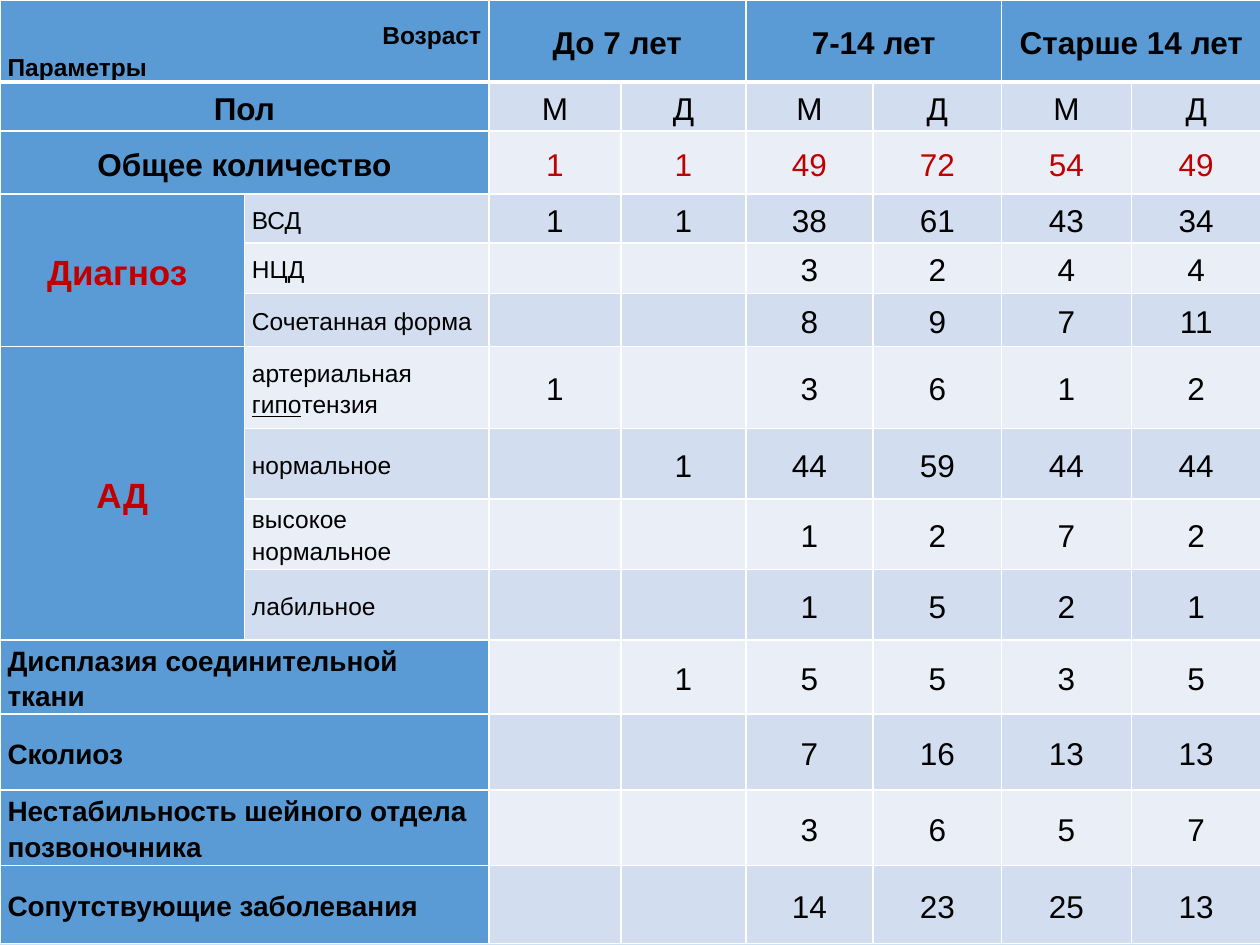
from lxml import etree
from pptx import Presentation
from pptx.dml.color import RGBColor
from pptx.enum.text import MSO_ANCHOR, PP_ALIGN
from pptx.oxml import parse_xml
from pptx.oxml.ns import nsdecls, qn
from pptx.util import Inches, Pt

LEFT, CENTER, RIGHT = PP_ALIGN.LEFT, PP_ALIGN.CENTER, PP_ALIGN.RIGHT
MIDDLE, BOTTOM = MSO_ANCHOR.MIDDLE, MSO_ANCHOR.BOTTOM

BLUE = RGBColor(0x5B, 0x9B, 0xD5)
BANDS = (RGBColor(0xEA, 0xEF, 0xF7), RGBColor(0xD2, 0xDE, 0xEF))
BLACK = RGBColor(0, 0, 0)
RED = RGBColor(0xC0, 0, 0)
WHITE = RGBColor(0xFF, 0xFF, 0xFF)
BACKGROUND_STOPS = (
    (0, RGBColor(0xF7, 0xFA, 0xFD)),
    (74, RGBColor(0xB5, 0xD2, 0xEC)),
    (83, RGBColor(0xB5, 0xD2, 0xEC)),
    (100, RGBColor(0xCE, 0xE1, 0xF2)),
)

FONT = "Arial"
COLUMN_WIDTHS = (1.94, 1.94, 1.05, 0.99, 1.01, 1.02, 1.03, 1.03)
ROW_HEIGHTS = (0.65, 0.39, 0.5, 0.39, 0.4, 0.42, 0.65,
               0.56, 0.56, 0.56, 0.59, 0.6, 0.6, 0.62)
FIRST_VALUE_COLUMN = 2
TOTAL_ROW = 2

AGE_GROUPS = ("До 7 лет", "7-14 лет", "Старше 14 лет")
# Row, label, size and alignment of the labels across both label columns
WIDE_LABELS = (
    (1, "Пол", 18, CENTER),
    (2, "Общее количество", 18, CENTER),
    (10, "Дисплазия соединительной ткани", 16, LEFT),
    (11, "Сколиоз", 16, LEFT),
    (12, "Нестабильность шейного отдела позвоночника", 16, LEFT),
    (13, "Сопутствующие заболевания", 16, LEFT),
)
# First row, group label and the labels of its rows
GROUPS = (
    (3, "Диагноз ", ("ВСД", "НЦД", "Сочетанная форма")),
    (6, "АД", ("артериальная гипотензия", "нормальное",
               "высокое нормальное", "лабильное")),
)
UNDERLINED = "гипо"
VALUES = (
    ("М", "Д", "М", "Д", "М", "Д"),
    (1, 1, 49, 72, 54, 49),
    (1, 1, 38, 61, 43, 34),
    ("", "", 3, 2, 4, 4),
    ("", "", 8, 9, 7, 11),
    (1, "", 3, 6, 1, 2),
    ("", 1, 44, 59, 44, 44),
    ("", "", 1, 2, 7, 2),
    ("", "", 1, 5, 2, 1),
    ("", 1, 5, 5, 3, 5),
    ("", "", 7, 16, 13, 13),
    ("", "", 3, 6, 5, 7),
    ("", "", 14, 23, 25, 13),
)


def paint_background(slide):
    fill = slide.background.fill
    fill.gradient()
    fill.gradient_angle = 270
    stops = slide.background._cSld.find(".//" + qn("a:gsLst"))
    for stop in list(stops):
        stops.remove(stop)
    for position, color in BACKGROUND_STOPS:
        stop = etree.SubElement(stops, qn("a:gs"), pos=str(position * 1000))
        etree.SubElement(stop, qn("a:srgbClr"), val=str(color))


def set_borders(cell, top=1, bottom=1):
    properties = cell._tc.get_or_add_tcPr()
    sides = (("L", 1), ("R", 1), ("T", top), ("B", bottom))
    for index, (side, width) in enumerate(sides):
        properties.insert(index, parse_xml(
            f'<a:ln{side} {nsdecls("a")} w="{Pt(width)}"><a:solidFill>'
            f'<a:srgbClr val="{WHITE}"/></a:solidFill></a:ln{side}>'))


def write(cell, text, size, color=BLACK, bold=False, align=CENTER):
    cell.text_frame.text = text
    for paragraph in cell.text_frame.paragraphs:
        paragraph.alignment = align
        paragraph.line_spacing = 1.15
        before, mark, after = paragraph.text.partition(UNDERLINED)
        if mark:
            paragraph.runs[0].text = before
            underlined = paragraph.add_run()
            underlined.text = mark
            underlined.font.underline = True
            paragraph.add_run().text = after
        for run in paragraph.runs:
            run.font.name = FONT
            run.font.size = Pt(size)
            run.font.bold = bold
            run.font.color.rgb = color


def add_grid(slide):
    table = slide.shapes.add_table(
        len(ROW_HEIGHTS), len(COLUMN_WIDTHS), 0, 0,
        Inches(sum(COLUMN_WIDTHS)), Inches(sum(ROW_HEIGHTS))).table
    for column, width in zip(table.columns, COLUMN_WIDTHS):
        column.width = Inches(width)
    for index, (row, height) in enumerate(zip(table.rows, ROW_HEIGHTS)):
        row.height = Inches(height)
        for cell in row.cells:
            cell.margin_left = cell.margin_right = Inches(0.06)
            cell.margin_top = cell.margin_bottom = 0
            cell.vertical_anchor = MIDDLE
            cell.fill.solid()
            cell.fill.fore_color.rgb = BANDS[index % 2]
            set_borders(cell, top=3 if index == 1 else 1,
                        bottom=3 if index == 0 else 1)
    return table


def merge_label(table, row, column, rows, columns):
    cell = table.cell(row, column)
    cell.merge(table.cell(row + rows - 1, column + columns - 1))
    for r in range(row, row + rows):
        for c in range(column, column + columns):
            table.cell(r, c).fill.fore_color.rgb = BLUE
    return cell


def fill_header(table):
    corner = merge_label(table, 0, 0, 1, 2)
    write(corner, "Возраст\nПараметры", 14, bold=True, align=LEFT)
    corner.text_frame.paragraphs[0].alignment = RIGHT
    corner.vertical_anchor = BOTTOM
    for index, age in enumerate(AGE_GROUPS):
        cell = merge_label(table, 0, FIRST_VALUE_COLUMN + 2 * index, 1, 2)
        write(cell, age, 18, bold=True)


def fill_labels(table):
    for row, label, size, align in WIDE_LABELS:
        cell = merge_label(table, row, 0, 1, 2)
        write(cell, label, size, bold=True, align=align)
    for first_row, title, labels in GROUPS:
        cell = merge_label(table, first_row, 0, len(labels), 1)
        write(cell, title, 20, RED, bold=True)
        for row, label in enumerate(labels, first_row):
            write(table.cell(row, 1), label, 14, align=LEFT)


def fill_values(table):
    for row, values in enumerate(VALUES, 1):
        color = RED if row == TOTAL_ROW else BLACK
        for column, value in enumerate(values, FIRST_VALUE_COLUMN):
            if value != "":
                write(table.cell(row, column), str(value), 18, color)


def main():
    presentation = Presentation()
    presentation.slide_width = Inches(10)
    presentation.slide_height = Inches(7.5)
    slide = presentation.slides.add_slide(presentation.slide_layouts[6])
    paint_background(slide)

    # Table: age groups across, parameters down
    table = add_grid(slide)
    fill_header(table)
    fill_labels(table)
    fill_values(table)

    presentation.save("out.pptx")


if __name__ == "__main__":
    main()
